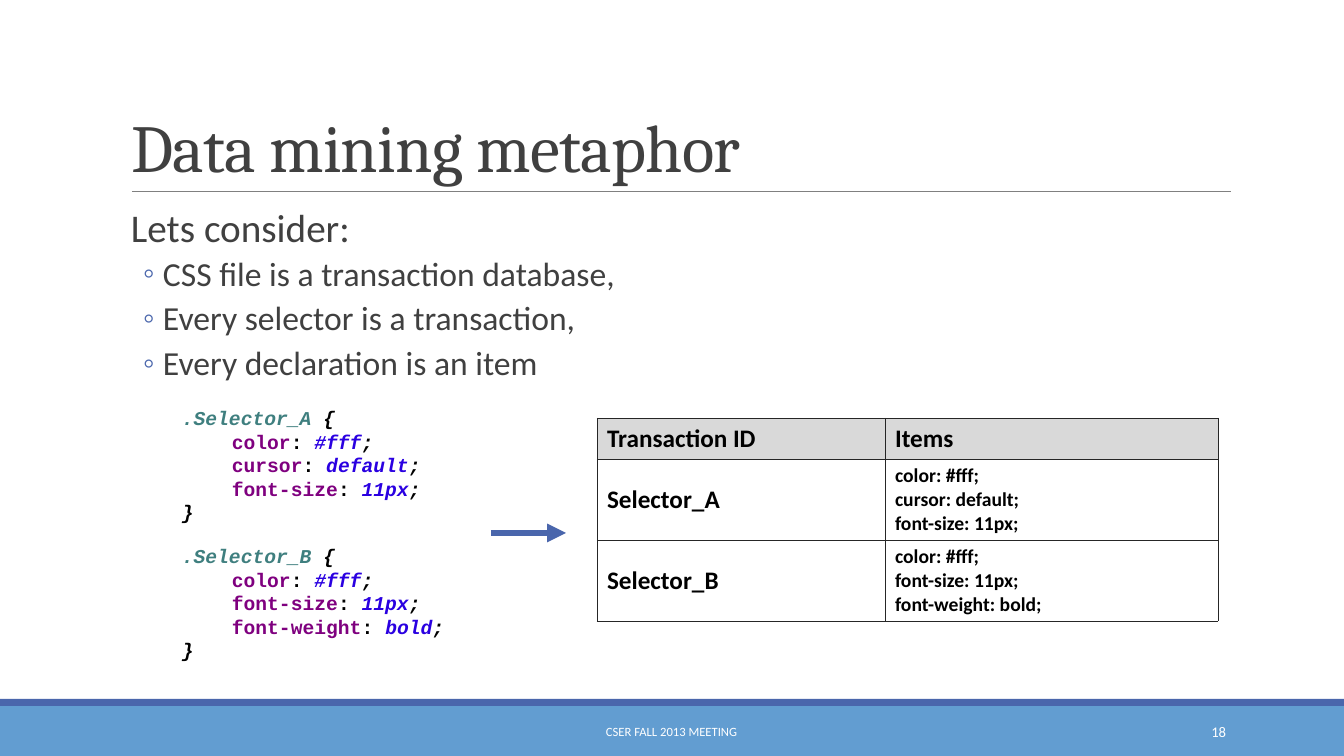
"""Build the data mining metaphor slide, measured in px on a 1344 by 756 grid."""
from dataclasses import dataclass

from lxml.etree import SubElement
from pptx import Presentation
from pptx.dml.color import RGBColor
from pptx.enum.shapes import MSO_CONNECTOR, MSO_SHAPE
from pptx.enum.text import MSO_ANCHOR, MSO_AUTO_SIZE, PP_ALIGN
from pptx.oxml.ns import qn
from pptx.util import Emu, Pt

SCALE = 12192000 / 1344
BLUE, SKY, GREY = "4A66AC", "629DD1", "404040"
BLACK, WHITE = "000000", "FFFFFF"
TEAL, PLUM, INDIGO = "3F7F7F", "7F007F", "2A00E1"


@dataclass(frozen=True)
class Box:
    left: int
    top: int
    width: int
    height: int


@dataclass(frozen=True)
class Font:
    name: str
    size: float
    color: str
    bold: bool = False
    italic: bool = False


@dataclass(frozen=True)
class Rule:
    name: str
    top: int
    items: tuple[tuple[str, str], ...]


@dataclass(frozen=True)
class Band:
    box: Box
    color: str


@dataclass(frozen=True)
class Note:
    text: str
    box: Box
    size: float
    align: PP_ALIGN


@dataclass(frozen=True)
class Line:
    start: tuple[int, int]
    end: tuple[int, int]
    color: str
    width: float
    arrow: bool = False


RULES = (
    Rule("Selector_A", 401, (("color", "#fff"), ("cursor", "default"), ("font-size", "11px"))),
    Rule("Selector_B", 539, (("color", "#fff"), ("font-size", "11px"), ("font-weight", "bold"))),
)
BANDS = (Band(Box(0, 706, 1344, 50), SKY), Band(Box(0, 699, 1344, 7), BLUE))
LINES = (
    Line((132, 191), (1231, 191), "808080", 0.5),
    Line((491, 533), (566, 533), BLUE, 4.5, True),
)
NOTES = (
    Note("CSER FALL 2013 MEETING", Box(406, 712, 531, 40), 9, PP_ALIGN.CENTER),
    Note("18", Box(1092, 712, 144, 40), 10.5, PP_ALIGN.RIGHT),
)
POINTS = (
    "CSS file is a transaction database,",
    "Every selector is a transaction,",
    "Every declaration is an item",
)


def px(count: int) -> Emu:
    """Turn px into EMU."""
    return Emu(round(count * SCALE))


def paint(color: str) -> RGBColor:
    """Turn a hex string into a colour."""
    return RGBColor.from_string(color)


def spots(box: Box) -> tuple[Emu, Emu, Emu, Emu]:
    """Give the four lengths of a box in EMU."""
    return px(box.left), px(box.top), px(box.width), px(box.height)


def place(shape, box: Box) -> None:
    """Move and size a placeholder."""
    shape.left, shape.top, shape.width, shape.height = spots(box)


def write(para, text: str, font: Font):
    """Add one formatted run."""
    run = para.add_run()
    run.text = text
    face = run.font
    face.name, face.size = font.name, Pt(font.size)
    face.bold, face.italic = font.bold, font.italic
    face.color.rgb = paint(font.color)
    return run


def paras(frame, count: int) -> list:
    """Give a text frame the wanted number of paragraphs."""
    return [frame.paragraphs[0], *(frame.add_paragraph() for _ in range(count - 1))]


def indent(para, margin: int, hang: int = 0) -> None:
    """Set the left margin and hanging first line."""
    props = para._p.get_or_add_pPr()
    props.set("marL", str(px(margin)))
    props.set("indent", str(-px(hang)))


def bullet(para, mark: str, color: str) -> None:
    """Give a paragraph a coloured bullet, or none for an empty mark."""
    props = para._p.get_or_add_pPr()
    if mark:
        tint = SubElement(props, qn("a:buClr"))
        SubElement(tint, qn("a:srgbClr"), val=color)
        SubElement(props, qn("a:buChar"), char=mark)
    else:
        SubElement(props, qn("a:buNone"))


def draw_band(slide, band: Band) -> None:
    """Draw a plain filled band."""
    shape = slide.shapes.add_shape(MSO_SHAPE.RECTANGLE, *spots(band.box))
    shape.shadow.inherit = False
    shape.fill.solid()
    shape.fill.fore_color.rgb = paint(band.color)
    shape.line.fill.background()


def draw_line(slide, line: Line) -> None:
    """Draw a straight line, with an arrowhead if asked."""
    ends = [px(value) for value in (*line.start, *line.end)]
    shape = slide.shapes.add_connector(MSO_CONNECTOR.STRAIGHT, *ends)
    shape.line.color.rgb = paint(line.color)
    shape.line.width = Pt(line.width)
    if line.arrow:
        SubElement(shape.line._get_or_add_ln(), qn("a:tailEnd"), type="triangle")
    SubElement(shape._element.spPr, qn("a:effectLst"))


def draw_note(slide, note: Note) -> None:
    """Draw a white footer text."""
    frame = slide.shapes.add_textbox(*spots(note.box)).text_frame
    frame.word_wrap, frame.vertical_anchor = True, MSO_ANCHOR.MIDDLE
    para = frame.paragraphs[0]
    para.alignment = note.align
    write(para, note.text, Font("Calibri", note.size, WHITE))


def draw_title(slide) -> None:
    """Fill the title placeholder."""
    title = slide.shapes.title
    place(title, Box(121, 31, 1109, 160))
    frame = title.text_frame
    frame.auto_size, frame.vertical_anchor = MSO_AUTO_SIZE.NONE, MSO_ANCHOR.BOTTOM
    para = frame.paragraphs[0]
    para.alignment, para.line_spacing = PP_ALIGN.LEFT, 0.85
    run = write(para, "Data mining metaphor", Font("Cambria", 48, GREY))
    run._r.get_or_add_rPr().set("spc", "-50")


def draw_body(slide) -> None:
    """Fill the body placeholder with the lead and its points."""
    body = slide.placeholders[1]
    place(body, Box(121, 204, 544, 444))
    frame = body.text_frame
    frame.auto_size, frame.vertical_anchor = MSO_AUTO_SIZE.NONE, MSO_ANCHOR.TOP
    frame.margin_left = frame.margin_right = 0
    lead, *rest = paras(frame, len(POINTS) + 1)
    lead.line_spacing, lead.space_before, lead.space_after = 0.9, Pt(12), Pt(2)
    indent(lead, 10)
    bullet(lead, "", BLUE)
    write(lead, "Lets consider:", Font("Calibri", 28, GREY))
    for para, text in zip(rest, POINTS):
        para.level = 1
        para.line_spacing, para.space_before, para.space_after = 0.9, Pt(2), Pt(4)
        indent(para, 42, 20)
        bullet(para, "◦", BLUE)
        write(para, text, Font("Calibri", 24, GREY))


def draw_code(slide, rule: Rule) -> None:
    """Draw one CSS rule as coloured code."""
    def code(color: str, italic: bool = True) -> Font:
        """Give the code font in one colour."""
        return Font("Courier New", 14, color, True, italic)

    frame = slide.shapes.add_textbox(*spots(Box(172, rule.top, 393, 129))).text_frame
    frame.word_wrap = True
    first, *rest, last = paras(frame, len(rule.items) + 2)
    write(first, f".{rule.name} ", code(TEAL))
    write(first, "{", code(BLACK))
    for para, (prop, value) in zip(rest, rule.items):
        para.level = 1
        indent(para, 50)
        write(para, prop, code(PLUM, False))
        write(para, ": ", code(BLACK, False))
        write(para, value, code(INDIGO))
        write(para, ";", code(BLACK))
    write(last, "}", code(BLACK))


def fill_cell(cell, texts: list[str], size: int, shade: str = "") -> None:
    """Write, border and shade one cell."""
    cell.vertical_anchor = MSO_ANCHOR.MIDDLE
    for para, text in zip(paras(cell.text_frame, len(texts)), texts):
        write(para, text, Font("Calibri", size, BLACK, True))
    props = cell._tc.get_or_add_tcPr()
    for side in ("lnL", "lnR", "lnT", "lnB"):
        edge = SubElement(props, qn(f"a:{side}"), w=str(Pt(0.25)))
        SubElement(SubElement(edge, qn("a:solidFill")), qn("a:srgbClr"), val="262626")
    if shade:
        cell.fill.solid()
        cell.fill.fore_color.rgb = paint(shade)
    else:
        cell.fill.background()


def draw_table(slide) -> None:
    """Draw the transactions and their items."""
    table = slide.shapes.add_table(len(RULES) + 1, 2, *spots(Box(597, 418, 621, 202))).table
    table.first_row = table.horz_banding = False
    for col, width in zip(table.columns, (288, 333)):
        col.width = px(width)
    for row, height in zip(table.rows, (41, 81, 80)):
        row.height = px(height)
    for col, text in enumerate(("Transaction ID", "Items")):
        fill_cell(table.cell(0, col), [text], 18, "D9D9D9")
    for row, rule in enumerate(RULES, 1):
        fill_cell(table.cell(row, 0), [rule.name], 18)
        fill_cell(table.cell(row, 1), [f"{prop}: {value};" for prop, value in rule.items], 14)


def main() -> None:
    """Build and save the slide."""
    deck = Presentation()
    deck.slide_width, deck.slide_height = px(1344), px(756)
    slide = deck.slides.add_slide(deck.slide_layouts[1])
    for band in BANDS:
        draw_band(slide, band)
    draw_title(slide)
    draw_body(slide)
    for note in NOTES:
        draw_note(slide, note)
    for rule in RULES:
        draw_code(slide, rule)
    draw_table(slide)
    for line in LINES:
        draw_line(slide, line)
    deck.save("out.pptx")


if __name__ == "__main__":
    main()
